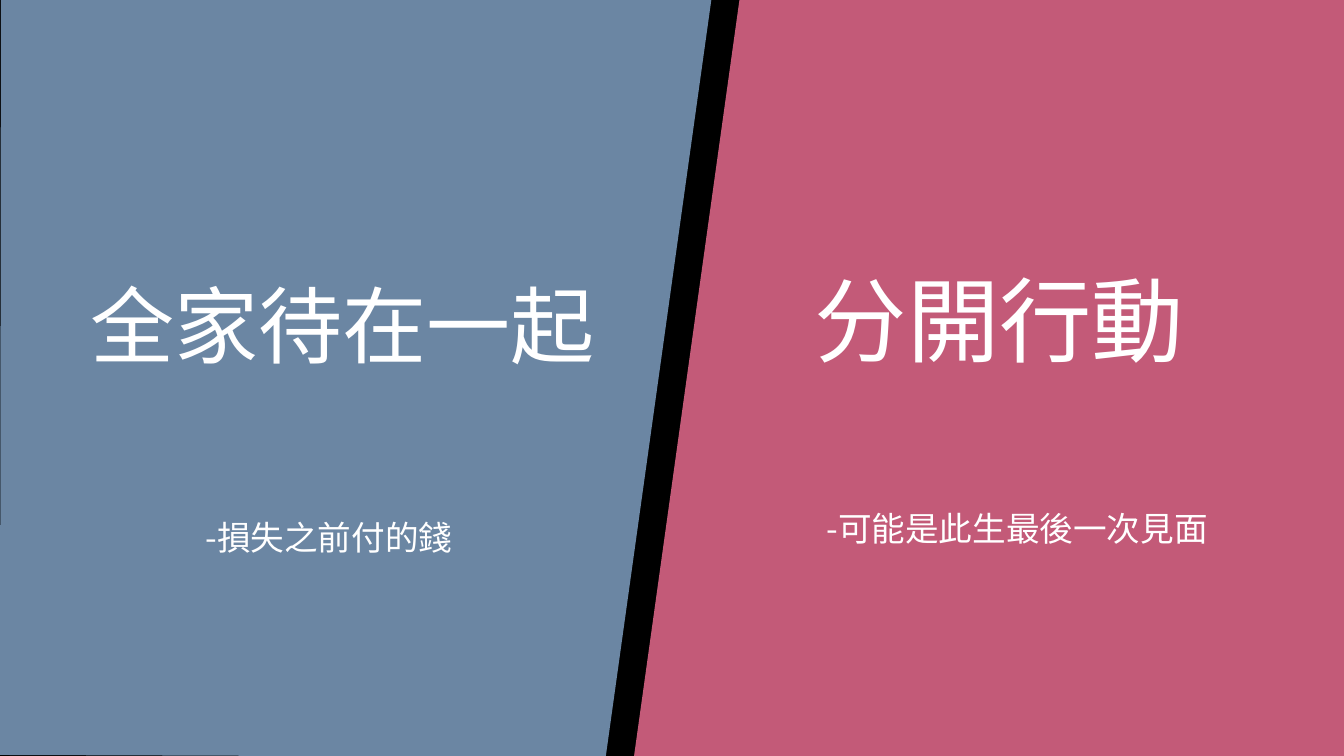
"""Build a slide that contrasts two choices on slanted panels."""
import pptx
import pptx.dml.color
import pptx.enum.text
import pptx.util

Pt = pptx.util.Pt
PP_ALIGN = pptx.enum.text.PP_ALIGN
TITLE = {"name": "Calibri"}
NOTE = {"name": "Noto Sans CJK JP", "size": Pt(24)}


def fill_solid(fill, color):
    """Fill with a solid hex colour."""
    fill.solid()
    fill.fore_color.rgb = pptx.dml.color.RGBColor.from_string(color)


def add_panel(s, points, color):
    """Draw a closed, borderless panel through the points."""
    start, *rest = [(Pt(x), Pt(y)) for x, y in points]
    builder = s.shapes.build_freeform(*start)
    builder.add_line_segments(rest, close=True)
    sp = builder.convert_to_shape()
    sp.shadow.inherit = False
    fill_solid(sp.fill, color)
    sp.line.fill.background()


def add_text(s, text, box, font, align=PP_ALIGN.LEFT):
    """Add one line of white text in a wrapping box."""
    sp = s.shapes.add_textbox(*map(Pt, box))
    tf = sp.text_frame
    tf.word_wrap = True
    tf.auto_size = pptx.enum.text.MSO_AUTO_SIZE.SHAPE_TO_FIT_TEXT
    p = tf.paragraphs[0]
    p.alignment = align
    r = p.add_run()
    r.text = text
    for key, value in font.items():
        setattr(r.font, key, value)
    fill_solid(r.font.fill, "FFFFFF")


def main():
    """Build and save the slide."""
    prs = pptx.Presentation()
    prs.slide_width, prs.slide_height = Pt(960), Pt(540)
    s = prs.slides.add_slide(prs.slide_layouts[6])
    fill_solid(s.background.fill, "000000")

    add_panel(s, [(0.7, -1.4), (508.3, -1.4), (432.7, 540.7), (0, 539.3)], "6B86A3")
    add_panel(s, [(528.3, -0.7), (960.5, 0), (960, 540), (452.9, 540)], "C35A78")

    add_text(s, "全家待在一起", (40.3, 191.5, 409, 80),
             {**TITLE, "size": Pt(60)}, PP_ALIGN.CENTER)
    add_text(s, "分開行動", (492.5, 184.3, 442.8, 87.2),
             {**TITLE, "size": Pt(66)}, PP_ALIGN.CENTER)
    add_text(s, "-損失之前付的錢", (139.7, 365.8, 287.3, 36), NOTE)
    add_text(s, "-可能是此生最後一次見面", (583.2, 359.3, 293.8, 36), NOTE)

    prs.save("out.pptx")


if __name__ == "__main__":
    main()
